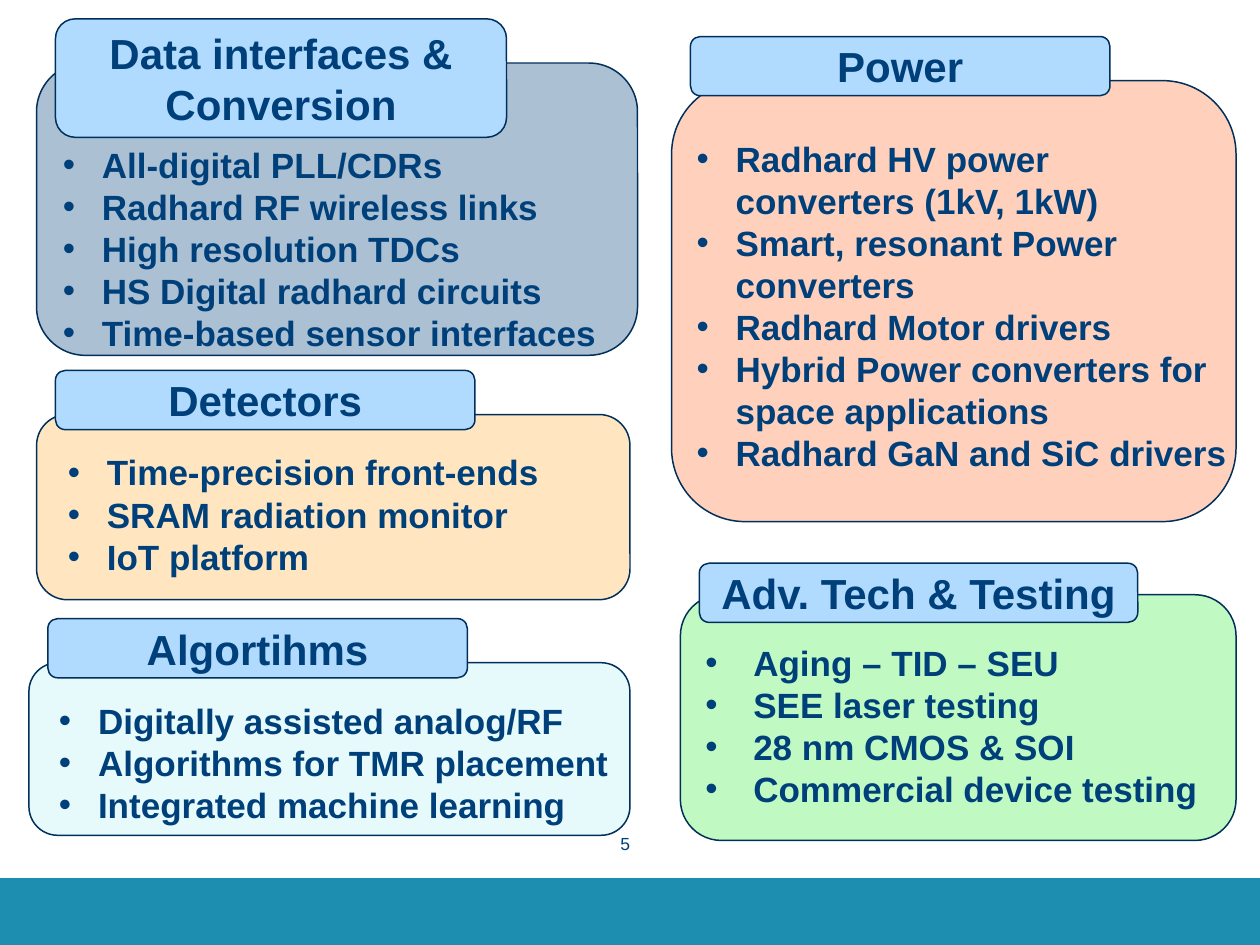
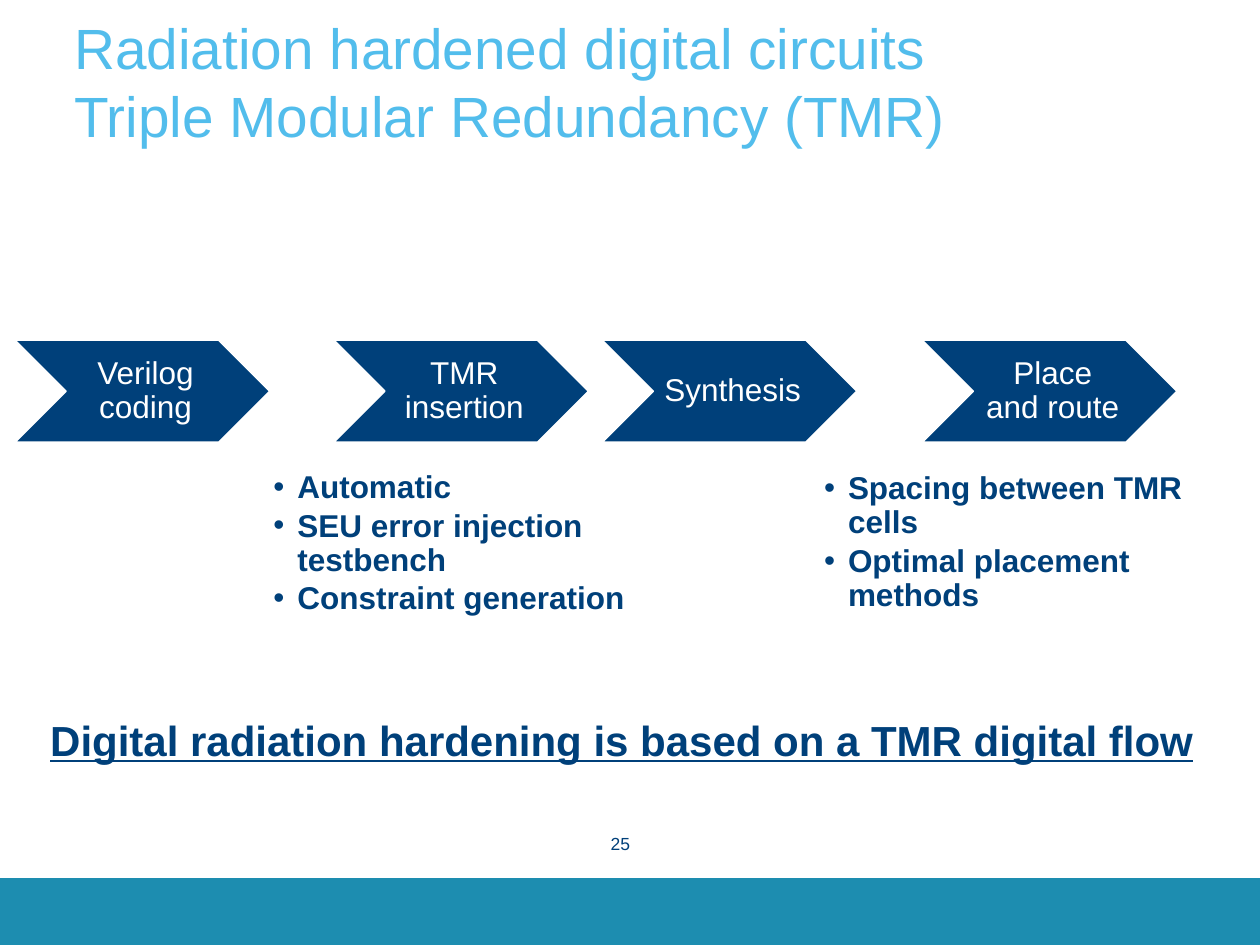
from dataclasses import dataclass

from lxml import etree
from pptx import Presentation
from pptx.dml.color import RGBColor
from pptx.enum.shapes import MSO_SHAPE
from pptx.enum.text import MSO_ANCHOR, MSO_AUTO_SIZE, PP_ALIGN
from pptx.oxml.ns import qn
from pptx.util import Emu, Pt

RECTANGLE = MSO_SHAPE.RECTANGLE
ROUNDED = MSO_SHAPE.ROUNDED_RECTANGLE
CHEVRON = MSO_SHAPE.CHEVRON
LEFT, CENTER, RIGHT = PP_ALIGN.LEFT, PP_ALIGN.CENTER, PP_ALIGN.RIGHT
TOP, MIDDLE, BOTTOM = MSO_ANCHOR.TOP, MSO_ANCHOR.MIDDLE, MSO_ANCHOR.BOTTOM
NO_AUTOFIT = MSO_AUTO_SIZE.NONE

EMU_PER_PX = 9144
SLIDE_WIDTH, SLIDE_HEIGHT = 1000, 750
TITLE_ONLY, BLANK = 5, 6
TEXT_INSETS = (10, 5, 10, 5)
NO_INSETS = (0, 0, 0, 0)


@dataclass(frozen=True)
class Theme:
    font: str = "Arial"
    navy: str = "00407A"
    outline: str = "002F5A"
    white: str = "FFFFFF"
    band: str = "1D8DB0"
    heading: str = "B1DAFF"
    title: str = "52BDEC"
    orange: str = "FFD89F"
    aqua: str = "B9EEF5"
    peach: str = "FFB899"
    green: str = "9FF7A1"
    title_size: float = 32.4
    heading_size: int = 24
    topic_size: int = 20
    step_size: int = 18
    number_size: int = 10
    line_width: float = 0.85


def px(length):
    return Emu(length * EMU_PER_PX)


class Deck:
    def __init__(self, theme):
        self.theme = theme
        self.presentation = Presentation()
        self.presentation.slide_width = px(SLIDE_WIDTH)
        self.presentation.slide_height = px(SLIDE_HEIGHT)
        self.slide = None

    def start_slide(self, layout, number):
        layouts = self.presentation.slide_layouts
        self.slide = self.presentation.slides.add_slide(layouts[layout])
        self.shape(RECTANGLE, (0, 697, SLIDE_WIDTH, 53), self.theme.band)
        self.text((398, 661, 102, 31), [number], self.theme.number_size,
                  align=RIGHT, insets=NO_INSETS)

    def shape(self, preset, box, fill, line=None, opacity=100):
        shape = self.slide.shapes.add_shape(preset, *map(px, box))
        shape.shadow.inherit = False
        shape.fill.solid()
        shape.fill.fore_color.rgb = RGBColor.from_string(fill)
        if opacity < 100:
            color = shape.element.spPr.find(qn("a:solidFill"))[0]
            etree.SubElement(color, qn("a:alpha"), val=str(opacity * 1000))
        if line:
            shape.line.color.rgb = RGBColor.from_string(line)
            shape.line.width = Pt(self.theme.line_width)
        else:
            shape.line.fill.background()
        return shape

    def fill_text(self, frame, lines, size, color=None, bold=False, underline=False,
                  align=LEFT, anchor=TOP, insets=TEXT_INSETS, spacing=None,
                  gap=0, indent=0):
        frame.word_wrap = True
        frame.auto_size = NO_AUTOFIT
        frame.vertical_anchor = anchor
        (frame.margin_left, frame.margin_top,
         frame.margin_right, frame.margin_bottom) = map(px, insets)
        frame.text = "\n".join(lines)
        for paragraph in frame.paragraphs:
            paragraph.alignment = align
            paragraph.line_spacing = spacing
            if gap:
                paragraph.space_after = Pt(gap)
            if indent:
                self.bullet(paragraph, indent)
            for run in paragraph.runs:
                run.font.name = self.theme.font
                run.font.size = Pt(size)
                run.font.bold = bold
                run.font.underline = underline
                run.font.color.rgb = RGBColor.from_string(color or self.theme.navy)

    def bullet(self, paragraph, indent):
        properties = paragraph._p.get_or_add_pPr()
        properties.set("marL", str(px(indent)))
        properties.set("indent", str(-px(indent)))
        etree.SubElement(properties, qn("a:buFont"), typeface=self.theme.font)
        etree.SubElement(properties, qn("a:buChar"), char="•")

    def text(self, box, lines, size, **style):
        frame = self.slide.shapes.add_textbox(*map(px, box)).text_frame
        self.fill_text(frame, lines, size, **style)

    def title(self, box, text):
        title = self.slide.shapes.title
        title.left, title.top, title.width, title.height = map(px, box)
        self.fill_text(title.text_frame, [text], self.theme.title_size,
                       color=self.theme.title, anchor=BOTTOM, insets=NO_INSETS)

    def topic_panel(self, panel, fill, opacity, heading, topics_box, topics,
                    heading_size=(333, 47), rise=35, indent=31):
        theme = self.theme
        left, top = panel[:2]
        self.shape(ROUNDED, panel, fill, theme.outline, opacity)
        header = self.shape(ROUNDED, (left + 15, top - rise, *heading_size),
                            theme.heading, theme.outline)
        self.fill_text(header.text_frame, heading, theme.heading_size, bold=True,
                       align=CENTER, anchor=MIDDLE)
        self.text(topics_box, topics, theme.topic_size, bold=True, indent=indent)

    def step(self, left, label):
        theme = self.theme
        chevron = self.shape(CHEVRON, (left, 270, 202, 81), theme.navy, theme.white)
        self.fill_text(chevron.text_frame, [label], theme.step_size,
                       color=theme.white, align=CENTER, anchor=MIDDLE,
                       insets=(8, 3, 3, 3), spacing=0.9)

    def step_details(self, box, details):
        self.text(box, details, self.theme.step_size, bold=True, insets=NO_INSETS,
                  spacing=0.9, gap=2.7, indent=19)


def build_topics(deck):
    theme = deck.theme
    deck.start_slide(BLANK, "5")
    deck.topic_panel(
        (29, 50, 477, 232), theme.navy, 33, ["Data interfaces &", "Conversion"],
        (40, 109, 467, 212),
        ["All-digital PLL/CDRs", "Radhard RF wireless links", "High resolution TDCs",
         "HS Digital radhard circuits", "Time-based sensor interfaces"],
        heading_size=(358, 94))
    deck.topic_panel(
        (23, 526, 477, 137), theme.aqua, 35, ["Algortihms"], (37, 550, 477, 111),
        ["Digitally assisted analog/RF", "Algorithms for TMR placement",
         "Integrated machine learning"])
    deck.topic_panel(
        (29, 329, 471, 147), theme.orange, 64, ["Detectors"], (44, 353, 423, 145),
        ["Time-precision front-ends", "SRAM radiation monitor", "IoT platform"])
    deck.topic_panel(
        (540, 472, 441, 195), theme.green, 64, ["Adv. Tech & Testing"],
        (550, 504, 431, 178),
        ["Aging – TID – SEU", "SEE laser testing", "28 nm CMOS & SOI",
         "Commercial device testing"],
        heading_size=(348, 47), rise=25, indent=38)
    deck.topic_panel(
        (533, 64, 448, 350), theme.peach, 64, ["Power"], (543, 104, 445, 279),
        ["Radhard HV power converters (1kV, 1kW)", "Smart, resonant Power converters",
         "Radhard Motor drivers", "Hybrid Power converters for space applications",
         "Radhard GaN and SiC drivers"])


def build_tmr_flow(deck):
    deck.start_slide(TITLE_ONLY, "25")
    deck.title((59, 20, 911, 98),
               "Radiation hardened digital circuits\vTriple Modular Redundancy (TMR)")
    steps = [(12, "Verilog coding"), (265, "TMR insertion"),
             (478, "Synthesis"), (732, "Place and route")]
    for left, label in steps:
        deck.step(left, label)
    deck.step_details((217, 374, 311, 166),
                      ["Automatic", "SEU error injection testbench",
                       "Constraint generation"])
    deck.step_details((654, 375, 315, 166),
                      ["Spacing between TMR cells", "Optimal placement methods"])
    deck.text((30, 562, 959, 50),
              ["Digital radiation hardening is based on a TMR digital flow"],
              deck.theme.heading_size, bold=True, underline=True)


def main():
    deck = Deck(Theme())
    build_topics(deck)
    build_tmr_flow(deck)
    deck.presentation.save("out.pptx")


if __name__ == "__main__":
    main()
